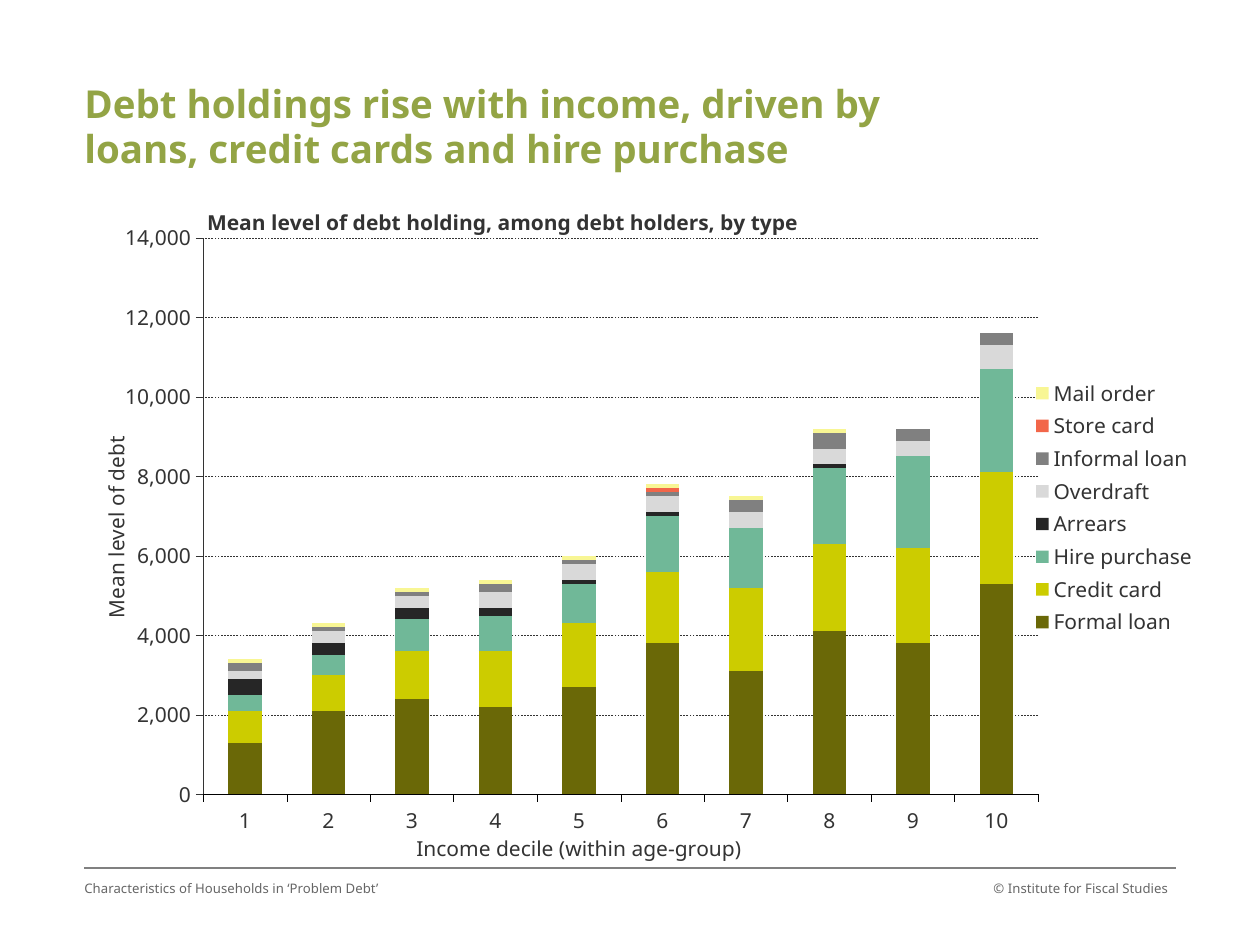
from lxml import etree
from pptx import Presentation
from pptx.chart.data import CategoryChartData
from pptx.dml.color import RGBColor
from pptx.enum.chart import XL_CHART_TYPE, XL_LEGEND_POSITION, XL_TICK_MARK
from pptx.enum.dml import MSO_LINE
from pptx.enum.shapes import MSO_CONNECTOR
from pptx.enum.text import MSO_ANCHOR, MSO_AUTO_SIZE, PP_ALIGN
from pptx.oxml.ns import qn
from pptx.util import Inches, Pt

STACKED = XL_CHART_TYPE.COLUMN_STACKED
LEGEND_RIGHT = XL_LEGEND_POSITION.RIGHT
OUTSIDE, NONE = XL_TICK_MARK.OUTSIDE, XL_TICK_MARK.NONE
DASH = MSO_LINE.DASH
STRAIGHT = MSO_CONNECTOR.STRAIGHT
TOP = MSO_ANCHOR.TOP
NO_FIT = MSO_AUTO_SIZE.NONE
LEFT, RIGHT = PP_ALIGN.LEFT, PP_ALIGN.RIGHT

FONT = "Noto Sans"
WIDTH, HEIGHT, MARGIN = 10, 7.5, 0.67
INNER = WIDTH - 2 * MARGIN
TEXT = "333333"
SERIES = [
    ("Formal loan", "6A6807", (1300, 2100, 2400, 2200, 2700, 3800, 3100, 4100, 3800, 5300)),
    ("Credit card", "CCCC00", (800, 900, 1200, 1400, 1600, 1800, 2100, 2200, 2400, 2800)),
    ("Hire purchase", "70B898", (400, 500, 800, 900, 1000, 1400, 1500, 1900, 2300, 2600)),
    ("Arrears", "262626", (400, 300, 300, 200, 100, 100, 0, 100, 0, 0)),
    ("Overdraft", "D9D9D9", (200, 300, 300, 400, 400, 400, 400, 400, 400, 600)),
    ("Informal loan", "808080", (200, 100, 100, 200, 100, 100, 300, 400, 300, 300)),
    ("Store card", "F26649", (0, 0, 0, 0, 0, 100, 0, 0, 0, 0)),
    ("Mail order", "F8F694", (100, 100, 100, 100, 100, 100, 100, 100, 0, 0)),
]


def rgb(value):
    """Turn a hex string into a colour."""
    return RGBColor.from_string(value)


def style(font, size, color, bold=False):
    """Set the face, size, colour and weight of a font."""
    font.name, font.size, font.bold = FONT, Pt(size), bold
    font.color.rgb = rgb(color)


def stroke(line, color, width):
    """Set the colour and width of a line."""
    line.color.rgb = rgb(color)
    line.width = Pt(width)


def fill_text(sp, text, size, color, bold=False, align=LEFT):
    """Write one wrapped paragraph into a shape without insets."""
    tf = sp.text_frame
    tf.word_wrap, tf.auto_size, tf.vertical_anchor = True, NO_FIT, TOP
    tf.margin_left = tf.margin_top = tf.margin_right = tf.margin_bottom = 0
    p = tf.paragraphs[0]
    p.text, p.alignment = text, align
    style(p.font, size, color, bold)
    return p


def set_layout(parent, after, x, y, w=None, h=None, inner=False):
    """Place a chart part at shares of the chart's size."""
    for old in parent.findall(qn("c:layout")):
        parent.remove(old)
    layout = etree.Element(qn("c:layout"))
    manual = etree.SubElement(layout, qn("c:manualLayout"))
    items = [("layoutTarget", "inner")] if inner else []
    items += [("xMode", "edge"), ("yMode", "edge"), ("x", x), ("y", y)]
    if w:
        items += [("w", w), ("h", h)]
    for tag, value in items:
        etree.SubElement(manual, qn("c:" + tag)).set("val", str(value))
    if after:
        parent.find(qn(after)).addnext(layout)
    else:
        parent.insert(0, layout)


def add_chart_title(title, text, x, y, bold=False):
    """Write a chart or axis title at the given share of the chart."""
    p = title.text_frame.paragraphs[0]
    p.text = text
    style(p.font, 12, TEXT, bold)
    set_layout(title._element, "c:tx", x, y)


def format_axis(axis, color, title, x, y):
    """Format one axis and its title."""
    axis.major_tick_mark, axis.minor_tick_mark = OUTSIDE, NONE
    stroke(axis.format.line, color, 0.25)
    style(axis.tick_labels.font, 12, TEXT)
    add_chart_title(axis.axis_title, title, x, y)


def add_debt_chart(s, x, y, w, h):
    """Add the stacked columns of debt by income decile."""
    data = CategoryChartData(number_format="#,##0")
    data.categories = [str(n) for n in range(1, 11)]
    for name, _, values in SERIES:
        data.add_series(name, values)
    chart = s.shapes.add_chart(
        STACKED, Inches(x), Inches(y), Inches(w), Inches(h), data).chart
    style(chart.font, 12, TEXT)
    add_chart_title(chart.chart_title,
                    "Mean level of debt holding, among debt holders, by type",
                    0.105, 0.01, True)
    plot = chart.plots[0]
    plot.gap_width, plot.overlap, plot.vary_by_categories = 150, 100, False
    for series, (_, color, _) in zip(plot.series, SERIES):
        series.format.fill.solid()
        series.format.fill.fore_color.rgb = rgb(color)
    format_axis(chart.category_axis, "000000",
                "Income decile (within age-group)", 0.29, 0.952)
    axis = chart.value_axis
    format_axis(axis, TEXT, "Mean level of debt", 0.01, 0.36)
    axis.minimum_scale, axis.maximum_scale, axis.major_unit = 0, 14000, 2000
    axis.tick_labels.number_format = "#,##0"
    axis.tick_labels.number_format_is_linked = False
    grid = axis.major_gridlines.format.line
    stroke(grid, TEXT, 0.25)
    grid.dash_style = DASH
    chart.has_legend = True
    legend = chart.legend
    legend.position, legend.include_in_layout = LEGEND_RIGHT, True
    style(legend.font, 12, TEXT)
    set_layout(legend._element, "c:legendPos", 0.84, 0.27, 0.14, 0.4)
    area = chart._chartSpace.find(".//" + qn("c:plotArea"))
    set_layout(area, None, 0.105, 0.064, 0.738, 0.837, inner=True)


def add_title(s, x, y, w, h):
    """Write the slide's title in its placeholder."""
    sp = s.shapes.title
    sp.left, sp.top, sp.width, sp.height = map(Inches, (x, y, w, h))
    p = fill_text(sp, "Debt holdings rise with income, driven by loans, "
                  "credit cards and hire purchase", 22, "93A445", True)
    p.line_spacing = 0.98


def add_footer(s, x, y, w, h):
    """Add the rule and the two footer texts below it."""
    rule = s.shapes.add_connector(
        STRAIGHT, Inches(x), Inches(y), Inches(x + w), Inches(y))
    stroke(rule.line, "808080", 0.75)
    etree.SubElement(rule._element.spPr, qn("a:effectLst"))
    half = (w - 0.06) / 2
    texts = [("Characteristics of Households in ‘Problem Debt’", LEFT),
             ("© Institute for Fiscal Studies", RIGHT)]
    for i, (text, align) in enumerate(texts):
        sp = s.shapes.add_textbox(Inches(x + i * half), Inches(y + 0.1),
                                  Inches(half), Inches(h - 0.1))
        fill_text(sp, text, 7.5, "666666", align=align)


def main():
    """Build and save the slide."""
    prs = Presentation()
    prs.slide_width, prs.slide_height = Inches(WIDTH), Inches(HEIGHT)
    s = prs.slides.add_slide(prs.slide_layouts[5])
    add_title(s, MARGIN, 0.65, 7.17, 0.44)
    add_debt_chart(s, MARGIN, 1.55, 8.98, 5.35)
    add_footer(s, MARGIN, 6.89, INNER, 0.5)
    prs.save("out.pptx")


if __name__ == "__main__":
    main()
